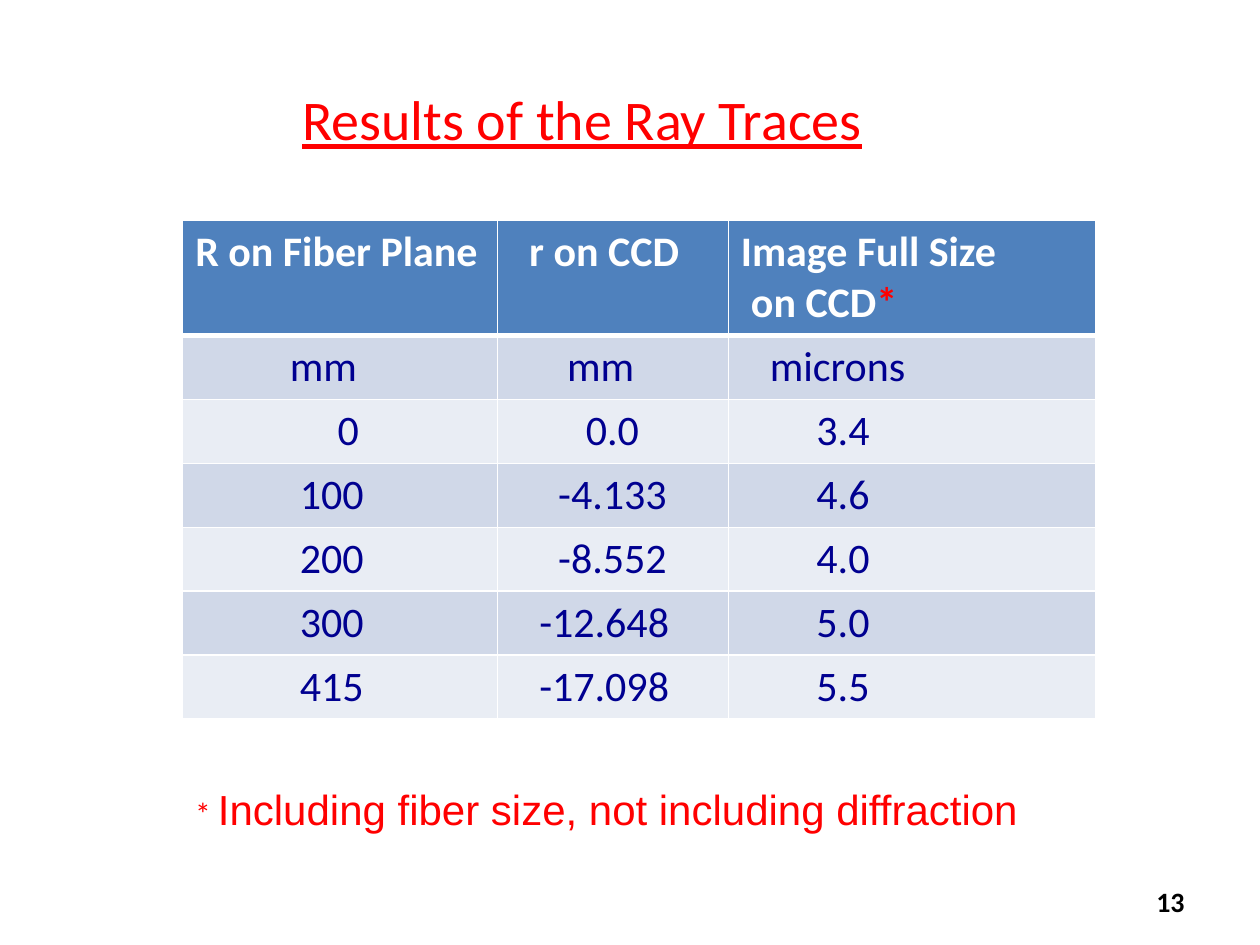
from dataclasses import dataclass
from typing import NamedTuple

from lxml import etree
from pptx import Presentation
from pptx import util as u
from pptx.dml.color import RGBColor
from pptx.enum import text as t
from pptx.oxml.ns import qn

PX = u.Inches(1) // 100


@dataclass(frozen=True)
class Theme:
    red: str = "FF0000"
    navy: str = "000090"
    white: str = "FFFFFF"
    black: str = "000000"
    head: str = "4F81BD"
    bands: tuple = ("E9EDF4", "D0D8E8")
    font: str = "Calibri"
    sans: str = "Arial"
    title: int = 32
    body: int = 24
    star: int = 18
    page: int = 16


LOOK = Theme()


class Span(NamedTuple):
    text: str
    size: int
    color: str
    font: str = LOOK.font
    bold: bool = False
    line: bool = False


class Line(NamedTuple):
    spans: list[Span]
    inset: int = 0


class Label(NamedTuple):
    box: tuple[int, int, int, int]
    line: Line
    align: t.PP_ALIGN = t.PP_ALIGN.LEFT
    anchor: t.MSO_ANCHOR = t.MSO_ANCHOR.TOP
    wrap: bool = True


def write(para, line: Line) -> None:
    if line.inset:
        props = para._p.get_or_add_pPr()
        props.set("marL", str(line.inset * PX))
        props.set("indent", "0")
    for span in line.spans:
        run = para.add_run()
        run.text = span.text
        font = run.font
        font.name, font.size = span.font, u.Pt(span.size)
        font.bold, font.underline = span.bold, span.line
        font.color.rgb = RGBColor.from_string(span.color)


def label(slide, item: Label) -> None:
    box = slide.shapes.add_textbox(*(n * PX for n in item.box))
    frame = box.text_frame
    frame.word_wrap = item.wrap
    frame.vertical_anchor = item.anchor
    if not item.wrap:
        frame.auto_size = t.MSO_AUTO_SIZE.SHAPE_TO_FIT_TEXT
    para = frame.paragraphs[0]
    para.alignment = item.align
    write(para, item.line)


def border(cell, top: int, base: int) -> None:
    props = cell._tc.get_or_add_tcPr()
    sides = {"lnL": 1, "lnR": 1, "lnT": top, "lnB": base}
    for i, (side, width) in enumerate(sides.items()):
        edge = etree.Element(qn(f"a:{side}"), w=str(u.Pt(width)))
        fill = etree.SubElement(edge, qn("a:solidFill"))
        etree.SubElement(fill, qn("a:srgbClr"), val=LOOK.white)
        props.insert(i, edge)


def paint(cell, lines: list[Line], row: int) -> None:
    for i, line in enumerate(lines):
        frame = cell.text_frame
        write(frame.add_paragraph() if i else frame.paragraphs[0], line)
    color = LOOK.bands[row % 2] if row else LOOK.head
    cell.fill.solid()
    cell.fill.fore_color.rgb = RGBColor.from_string(color)
    border(cell, 3 if row == 1 else 1, 1 if row else 3)


def head(text: str) -> Span:
    return Span(text, LOOK.body, LOOK.white, bold=True)


def data(text: str, inset: int) -> list[Line]:
    return [Line([Span(text, LOOK.body, LOOK.navy)], inset)]


STAR = Span("*", LOOK.body, LOOK.red, bold=True)
HEADS = [
    [Line([head("R on Fiber Plane")])],
    [Line([head("r on CCD")], 15)],
    [Line([head("Image Full Size")]), Line([head("on CCD"), STAR], 8)],
]
ROWS = [
    (("mm", 75), ("mm", 45), ("microns", 23)),
    (("0", 113), ("0.0", 60), ("3.4", 60)),
    (("100", 83), ("-4.133", 38), ("4.6", 60)),
    (("200", 83), ("-8.552", 38), ("4.0", 60)),
    (("300", 83), ("-12.648", 23), ("5.0", 60)),
    (("415", 83), ("-17.098", 23), ("5.5", 60)),
]
WIDTHS = (250, 183, 292)
TALL, LOW = 90, 50

NOTE = "Including fiber size, not including diffraction"
LABELS = [
    Label((28, 47, 868, 94),
          Line([Span("Results of the Ray Traces", LOOK.title, LOOK.red, line=True)]),
          t.PP_ALIGN.CENTER, t.MSO_ANCHOR.MIDDLE),
    Label((717, 695, 233, 40),
          Line([Span("13", LOOK.page, LOOK.black, bold=True)]),
          t.PP_ALIGN.RIGHT, t.MSO_ANCHOR.MIDDLE),
    Label((145, 617, 686, 50),
          Line([Span("* ", LOOK.star, LOOK.red),
                Span(NOTE, LOOK.body, LOOK.red, LOOK.sans)]),
          wrap=False),
]


def grid(slide) -> None:
    cells = [HEADS] + [[data(*item) for item in row] for row in ROWS]
    size = (145, 175, sum(WIDTHS), TALL + LOW * len(ROWS))
    table = slide.shapes.add_table(
        len(cells), len(WIDTHS), *(n * PX for n in size)).table
    for col, width in zip(table.columns, WIDTHS):
        col.width = width * PX
    for i, row in enumerate(cells):
        table.rows[i].height = (LOW if i else TALL) * PX
        for j, lines in enumerate(row):
            paint(table.cell(i, j), lines, i)


def main() -> None:
    deck = Presentation()
    deck.slide_width, deck.slide_height = 1000 * PX, 750 * PX
    slide = deck.slides.add_slide(deck.slide_layouts[6])
    grid(slide)
    for item in LABELS:
        label(slide, item)
    deck.save("out.pptx")


if __name__ == "__main__":
    main()
